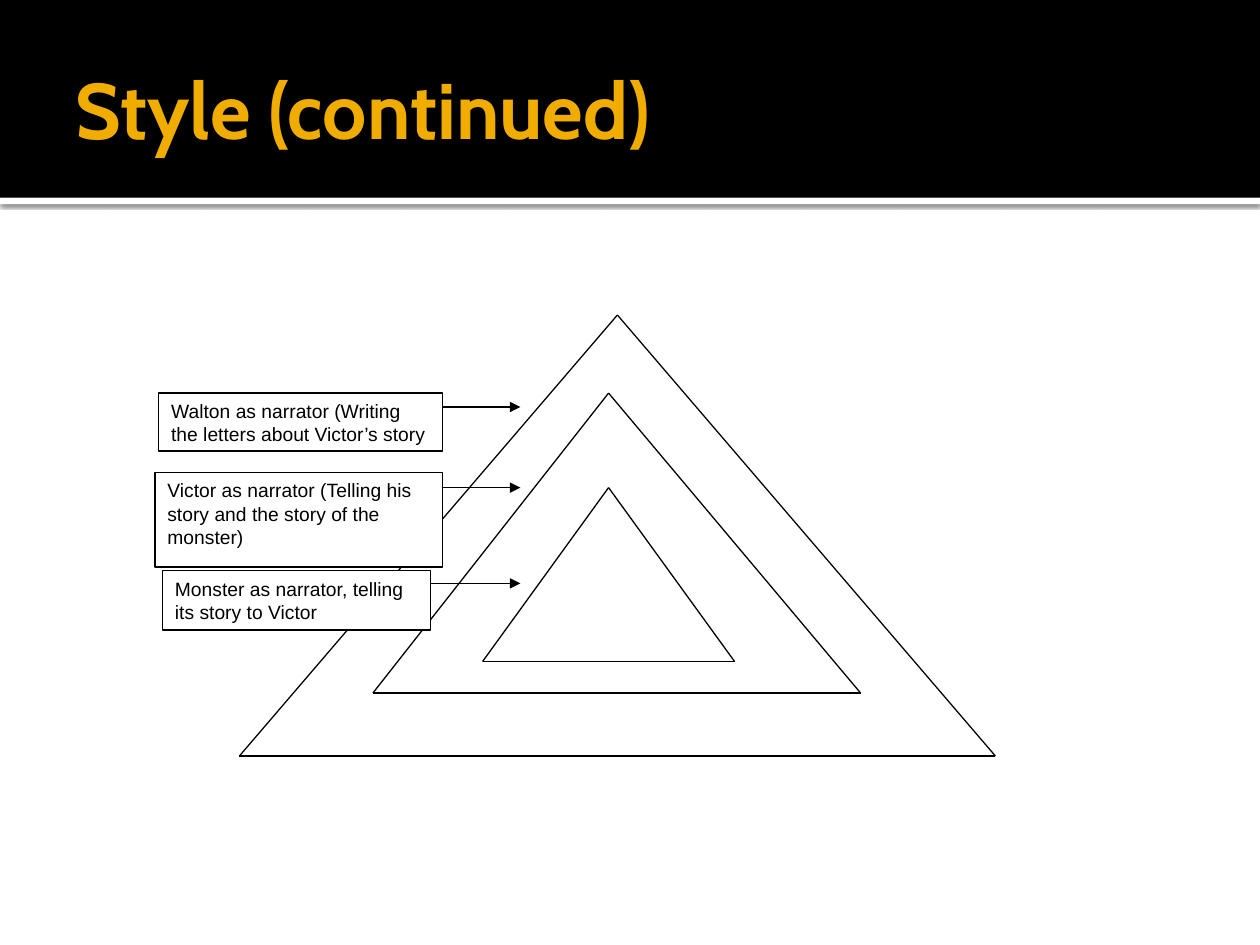
import pptx
import pptx.util
import pptx.dml.color
import pptx.enum.shapes
import pptx.enum.text
import pptx.oxml
import pptx.oxml.ns

COLORS = {"ink": "000000", "paper": "FFFFFF", "title": "F0AD00"}
NS = pptx.oxml.ns.nsdecls("a")
Inches, Pt = pptx.util.Inches, pptx.util.Pt
RGB = pptx.dml.color.RGBColor.from_string
RECT = pptx.enum.shapes.MSO_SHAPE.RECTANGLE
ANCHOR = pptx.enum.text.MSO_ANCHOR

prs = pptx.Presentation()
prs.slide_width, prs.slide_height = Inches(10), Inches(7.5)
s = prs.slides.add_slide(prs.slide_layouts[5])


def add_rect(x, y, w, h, fill):
    sp = s.shapes.add_shape(RECT, Inches(x), Inches(y), Inches(w), Inches(h))
    sp.shadow.inherit = False
    sp.fill.solid()
    sp.fill.fore_color.rgb = RGB(COLORS[fill])
    sp.line.fill.background()
    return sp


def add_line(start, end, arrow=False):
    c = s.shapes.add_connector(pptx.enum.shapes.MSO_CONNECTOR.STRAIGHT,
                               *(Inches(v) for v in start + end))
    c.line.color.rgb = RGB(COLORS["ink"])
    c.line.width = Pt(0.75)
    if arrow:
        c.line._get_or_add_ln().append(
            pptx.oxml.parse_xml(f'<a:tailEnd {NS} type="triangle"/>'))
    c._element.spPr.append(pptx.oxml.parse_xml(f"<a:effectLst {NS}/>"))


# Header: white strip with a soft shadow under a black band
strip = add_rect(0, 1.57, 10, 0.05, "paper")
strip._element.spPr.find(pptx.oxml.ns.qn("a:effectLst")).append(pptx.oxml.parse_xml(
    f'<a:outerShdw {NS} blurRad="{Pt(2.5)}" dist="{Pt(0.8)}" dir="5400000" rotWithShape="0">'
    f'<a:srgbClr val="{COLORS["ink"]}"><a:alpha val="60000"/></a:srgbClr></a:outerShdw>'))
add_rect(0, 0, 10, 1.57, "ink")

title = s.shapes.title
title.left, title.top, title.width, title.height = (Inches(v) for v in (0.5, 0.17, 9, 1.37))
s.shapes._spTree.append(title._element)  # in front of the band
title.text_frame.text = "Style (continued)"
for name, value in {"vertical_anchor": ANCHOR.MIDDLE, "word_wrap": True,
                    "margin_left": Inches(0.1), "margin_right": Inches(0.05),
                    "margin_top": Inches(0.05), "margin_bottom": Inches(0.05)}.items():
    setattr(title.text_frame, name, value)
p = title.text_frame.paragraphs[0]
p.alignment = pptx.enum.text.PP_ALIGN.LEFT
for name, value in {"name": "Cabin", "size": Pt(45), "bold": True}.items():
    setattr(p.runs[0].font, name, value)
p.runs[0].font.color.rgb = RGB(COLORS["title"])

# Nested triangles: apex, left and right end of the base, base height
triangles = [
    ((4.83, 3.12), 2.96, 6.83, 5.5),
    ((4.83, 3.87), 3.83, 5.83, 5.25),
    ((4.9, 2.5), 1.9, 7.9, 6),
]
for apex, left, right, base in triangles:
    add_line(apex, (left, base))
    add_line(apex, (right, base))
    add_line((left, base), (right, base))

# Narrators: arrow start and height, box, text
narrators = [
    (3.51, 3.23, (1.26, 3.12, 2.25, 0.46),
     "Walton as narrator (Writing the letters about Victor’s story"),
    (3.51, 3.87, (1.23, 3.75, 2.28, 0.75),
     "Victor as narrator (Telling his story and the story of the monster)"),
    (3.38, 4.63, (1.29, 4.53, 2.13, 0.47),
     "Monster as narrator, telling its story to Victor"),
]
for x, y, box, text in narrators:
    add_line((x, y), (4.13, y), arrow=True)
    sp = add_rect(*box, "paper")
    sp.line.color.rgb = RGB(COLORS["ink"])
    sp.line.width = Pt(0.75)
    tf = sp.text_frame
    tf.word_wrap = True
    tf.vertical_anchor = ANCHOR.TOP
    p = tf.paragraphs[0]
    p.alignment = pptx.enum.text.PP_ALIGN.LEFT
    r = p.add_run()
    r.text = text
    r.font.name, r.font.size = "Arial", Pt(11)
    r.font.color.rgb = RGB(COLORS["ink"])

prs.save("out.pptx")
